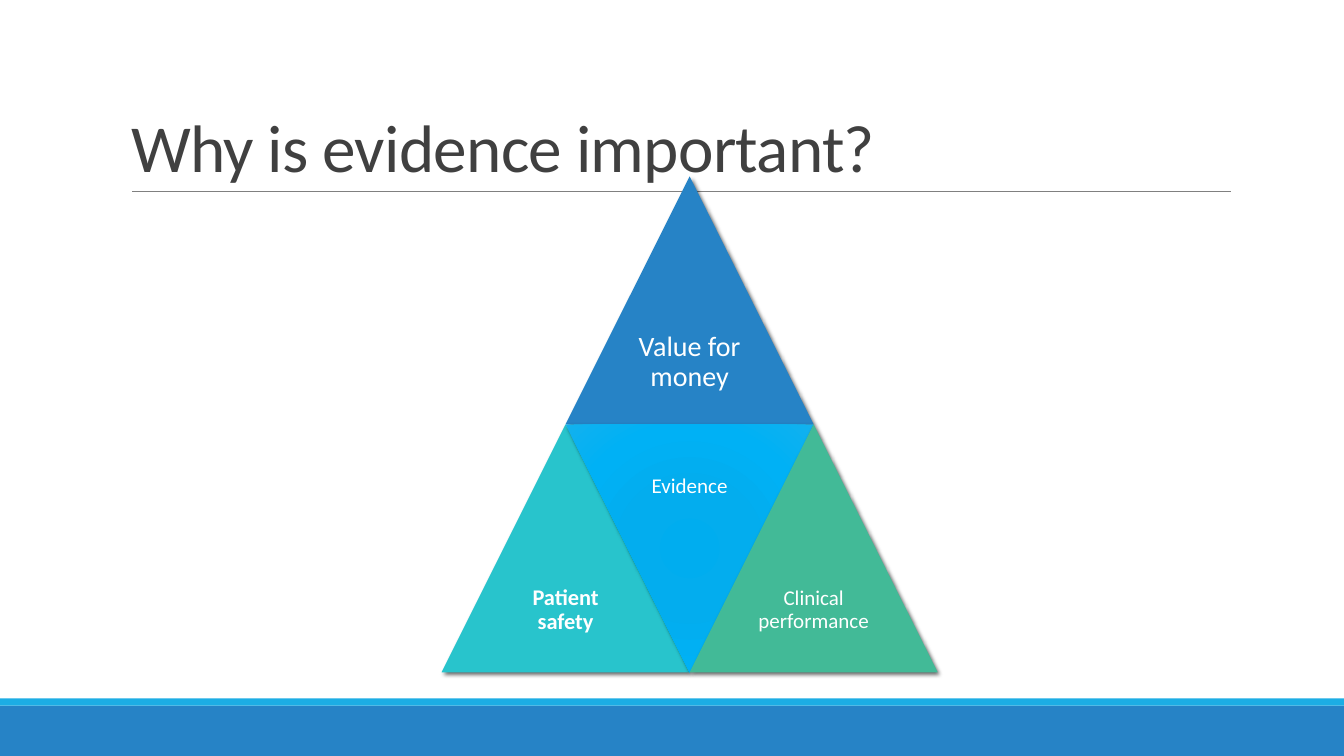
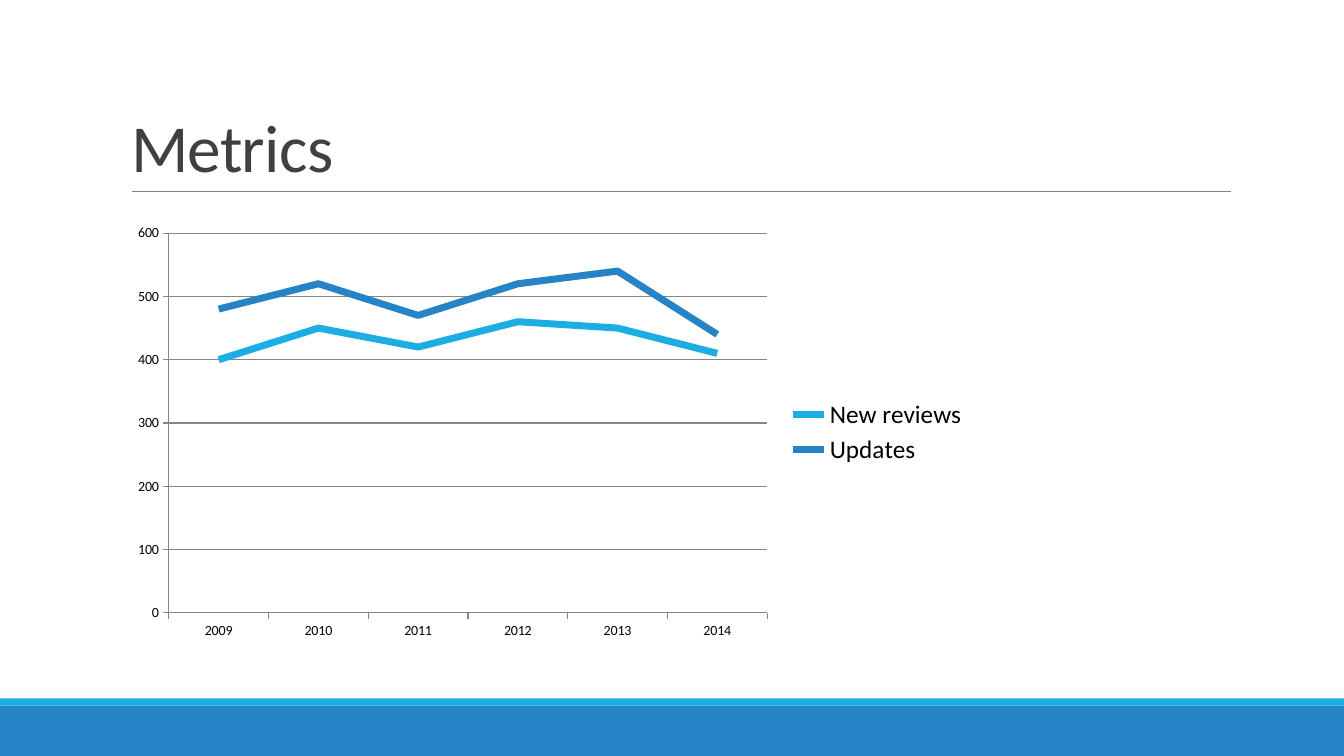
"""Build two slides on evidence: a four-part triangle and a line chart of yearly metrics."""
from lxml import etree
from pptx import Presentation
from pptx.chart.data import CategoryChartData
from pptx.dml.color import RGBColor
from pptx.enum.chart import XL_CHART_TYPE, XL_LEGEND_POSITION, XL_TICK_MARK
from pptx.enum.shapes import MSO_CONNECTOR, MSO_SHAPE
from pptx.enum.text import MSO_ANCHOR, MSO_AUTO_SIZE, PP_ALIGN
from pptx.oxml import parse_xml
from pptx.oxml.ns import nsdecls, qn
from pptx.util import Inches, Pt

RECTANGLE, TRIANGLE = MSO_SHAPE.RECTANGLE, MSO_SHAPE.ISOSCELES_TRIANGLE
STRAIGHT = MSO_CONNECTOR.STRAIGHT
LINE_CHART, LEGEND_RIGHT = XL_CHART_TYPE.LINE, XL_LEGEND_POSITION.RIGHT
TICK_OUT, TICK_NONE = XL_TICK_MARK.OUTSIDE, XL_TICK_MARK.NONE
BOTTOM, MIDDLE = MSO_ANCHOR.BOTTOM, MSO_ANCHOR.MIDDLE
LEFT, CENTER, NO_FIT = PP_ALIGN.LEFT, PP_ALIGN.CENTER, MSO_AUTO_SIZE.NONE

FONT = "Calibri"
COLORS = {
    "blue": "2683C6", "sky": "1CADE4", "teal": "28C4CC", "green": "42BA97",
    "title": "404040", "rule": "808080", "grid": "868686",
    "white": "FFFFFF", "black": "000000",
}
GLOW_STOPS = [(0, "00ADEF"), (34, "03ADEE"), (70, "00B1F5"), (100, "12B1EE")]

SLIDE_W, SLIDE_H = 13.33, 7.5
BANDS = [("blue", 7, 0.5), ("sky", 6.93, 0.07)]

EVIDENCE_TITLE = "Why is evidence important?"
TRIANGLE_LEFT, TRIANGLE_TOP, SIDE = 4.38, 1.75, 2.46
PARTS = [
    {"lines": ["Value for money"], "column": 0.5, "row": 0, "fill": "blue", "size": 20, "inset": 0.08},
    {"lines": ["Patient safety"], "column": 0, "row": 1, "fill": "teal", "size": 16, "inset": 0.07,
     "bold": True},
    {"lines": ["Evidence"], "column": 0.5, "row": 1, "fill": None, "size": 15, "inset": 0.06},
    {"lines": ["Clinical", "performance"], "column": 1, "row": 1, "fill": "green", "size": 15,
     "inset": 0.06},
]

METRICS_TITLE = "Metrics"
YEARS = ["2009", "2010", "2011", "2012", "2013", "2014"]
METRICS = [
    ("New reviews", "sky", [400, 450, 420, 460, 450, 410]),
    ("Updates", "blue", [480, 520, 470, 520, 540, 440]),
]


def rgb(name):
    return RGBColor.from_string(COLORS[name])


def style_font(font, size, color, bold=False):
    font.name, font.size, font.bold = FONT, Pt(size), bold
    font.color.rgb = rgb(color)


def add_block(slide, preset, left, top, width, height, fill):
    block = slide.shapes.add_shape(
        preset, Inches(left), Inches(top), Inches(width), Inches(height))
    block.shadow.inherit = False
    block.line.fill.background()
    if fill:
        block.fill.solid()
        block.fill.fore_color.rgb = rgb(fill)
    return block


def move_frame_to_layout(slide):
    frame = [add_block(slide, RECTANGLE, 0, top, SLIDE_W, height, fill)
             for fill, top, height in BANDS]
    rule = slide.shapes.add_connector(
        STRAIGHT, Inches(1.31), Inches(1.9), Inches(12.21), Inches(1.9))
    rule.line.color.rgb = rgb("rule")
    rule.line.width = Pt(0.5)
    etree.SubElement(rule.element.spPr, qn("a:effectLst"))
    for part in frame + [rule]:
        slide.slide_layout.shapes.element.append(part.element)


def set_title(slide, text):
    title = slide.shapes.title
    title.left, title.top = Inches(1.2), Inches(0.31)
    title.width, title.height = Inches(11), Inches(1.59)
    frame = title.text_frame
    frame.auto_size, frame.word_wrap, frame.vertical_anchor = NO_FIT, True, BOTTOM
    paragraph = frame.paragraphs[0]
    paragraph.alignment, paragraph.line_spacing = LEFT, 0.85
    run = paragraph.add_run()
    run.text = text
    style_font(run.font, 48, "title")
    run.font._element.set("spc", "-50")


def add_shadow(block):
    effects = block.element.spPr.find(qn("a:effectLst"))
    effects.append(parse_xml(
        f'<a:outerShdw {nsdecls("a")} blurRad="{Pt(3)}" dist="{Pt(2)}" dir="2700000" '
        f'rotWithShape="0"><a:srgbClr val="{COLORS["black"]}"><a:alpha val="60000"/>'
        '</a:srgbClr></a:outerShdw>'))


def add_glow(block):
    stops = "".join(f'<a:gs pos="{place * 1000}"><a:srgbClr val="{color}"/></a:gs>'
                    for place, color in GLOW_STOPS)
    glow = parse_xml(
        f'<a:gradFill {nsdecls("a")} rotWithShape="1"><a:gsLst>{stops}</a:gsLst>'
        '<a:path path="circle"><a:fillToRect l="100000" t="100000" r="100000" b="100000"/>'
        '</a:path></a:gradFill>')
    block.fill.gradient()
    properties = block.element.spPr
    properties.replace(properties.find(qn("a:gradFill")), glow)


def add_part(slide, part):
    left = TRIANGLE_LEFT + part["column"] * SIDE
    top = TRIANGLE_TOP + part["row"] * SIDE
    inverted = part["fill"] is None
    block = add_block(slide, TRIANGLE, left, top, SIDE, SIDE, part["fill"])
    add_shadow(block)
    if inverted:
        block.rotation = 180
        add_glow(block)

    half = SIDE / 2
    label = slide.shapes.add_textbox(
        Inches(left + half / 2), Inches(top if inverted else top + half),
        Inches(half), Inches(half))
    frame = label.text_frame
    frame.word_wrap, frame.vertical_anchor = True, MIDDLE
    frame.margin_left = frame.margin_right = Inches(part["inset"])
    frame.margin_top = frame.margin_bottom = Inches(part["inset"])
    paragraph = frame.paragraphs[0]
    paragraph.alignment, paragraph.line_spacing = CENTER, 0.9
    for index, line in enumerate(part["lines"]):
        if index:
            paragraph.add_line_break()
        run = paragraph.add_run()
        run.text = line
        style_font(run.font, part["size"], "white", part.get("bold", False))


def add_metrics_chart(slide):
    data = CategoryChartData()
    data.categories = YEARS
    for name, _, values in METRICS:
        data.add_series(name, values)
    chart = slide.shapes.add_chart(
        LINE_CHART, Inches(1.2), Inches(2.15), Inches(8.5), Inches(4.27), data).chart
    style_font(chart.font, 10, "black")
    chart.has_title = False
    chart.has_legend = True
    chart.legend.position = LEGEND_RIGHT
    chart.legend.include_in_layout = False
    style_font(chart.legend.font, 18, "black")

    chart.plots[0].vary_by_categories = False
    for series, (_, color, _) in zip(chart.plots[0].series, METRICS):
        series.smooth = False
        series.format.line.color.rgb = rgb(color)
        series.format.line.width = Pt(5)

    value_axis = chart.value_axis
    value_axis.minimum_scale, value_axis.maximum_scale = 0, 600
    value_axis.major_unit = 100
    value_axis.has_major_gridlines = True
    for axis in (chart.category_axis, value_axis):
        axis.major_tick_mark, axis.minor_tick_mark = TICK_OUT, TICK_NONE
    for ruled in (chart.category_axis, value_axis, value_axis.major_gridlines):
        ruled.format.line.color.rgb = rgb("grid")
        ruled.format.line.width = Pt(0.75)


def main():
    deck = Presentation()
    deck.slide_width, deck.slide_height = Inches(SLIDE_W), Inches(SLIDE_H)
    title_only = deck.slide_layouts[5]

    evidence = deck.slides.add_slide(title_only)
    move_frame_to_layout(evidence)
    set_title(evidence, EVIDENCE_TITLE)
    for part in PARTS:
        add_part(evidence, part)

    metrics = deck.slides.add_slide(title_only)
    set_title(metrics, METRICS_TITLE)
    add_metrics_chart(metrics)

    deck.save("out.pptx")


if __name__ == "__main__":
    main()
